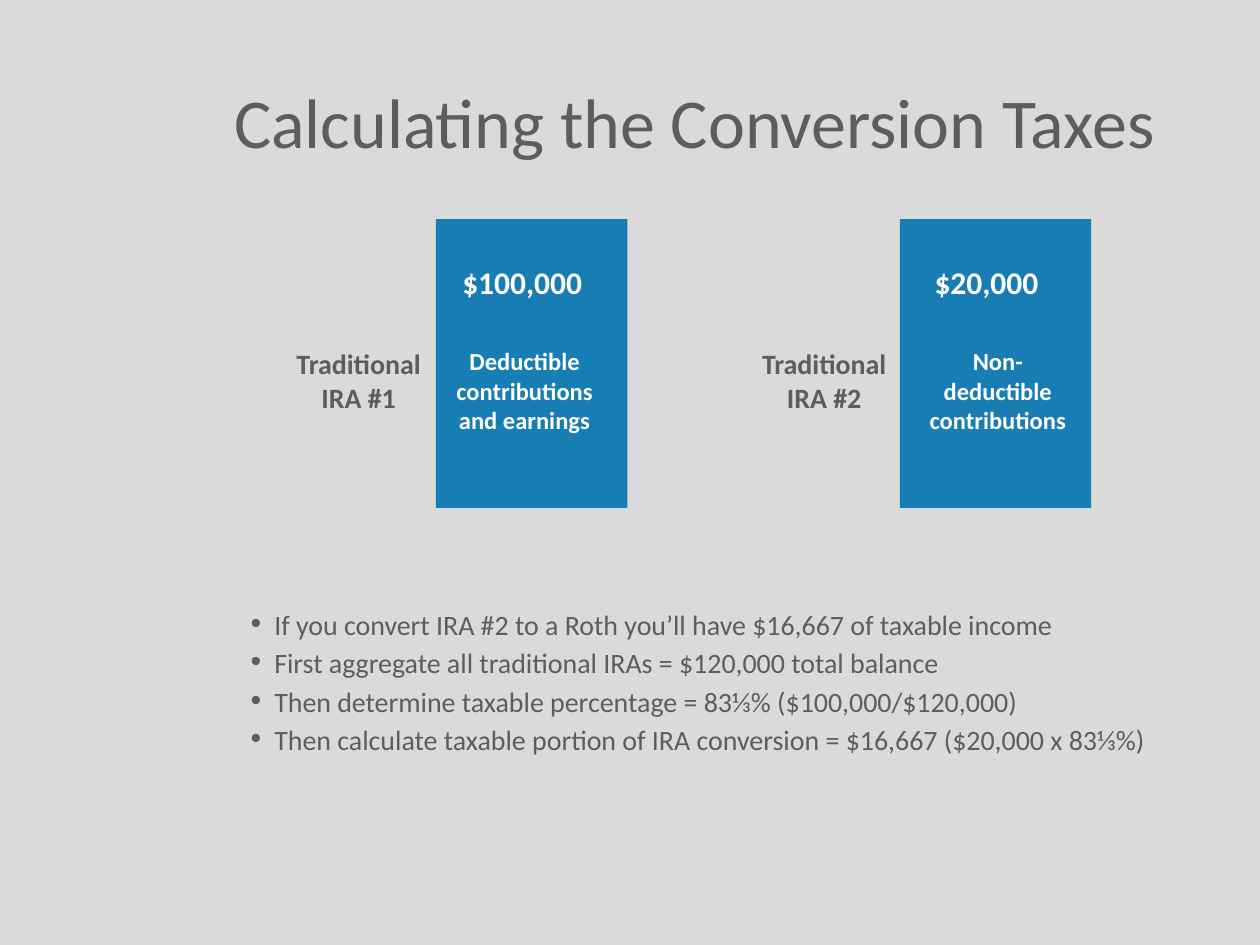
from lxml.etree import SubElement
from pptx import Presentation
from pptx.dml.color import RGBColor
from pptx.enum.shapes import MSO_SHAPE
from pptx.enum.text import MSO_ANCHOR, PP_ALIGN
from pptx.oxml.ns import qn
from pptx.util import Cm, Pt

GREY = RGBColor(0x5D, 0x5D, 0x5D)
BLUE = RGBColor(0x17, 0x7D, 0xB3)
WHITE = RGBColor(0xFF, 0xFF, 0xFF)
BACKGROUND = RGBColor(0xDA, 0xDA, 0xDA)

ACCOUNTS = [
    {"block": 8.79, "label": (5.64, 3.18, ["Traditional", "IRA #1"]),
     "amount": (9.07, 2.95, ["$100,000"]),
     "kind": (8.86, 3.43, ["Deductible contributions and earnings"])},
    {"block": 18.14, "label": (15.09, 3.05, ["Traditional", "IRA #2"]),
     "amount": (18.59, 2.82, ["$20,000"]),
     "kind": (18.39, 3.45, ["Non-deductible contributions"])},
]
STEPS = [
    "If you convert IRA #2 to a Roth you’ll have $16,667 of taxable income",
    "First aggregate all traditional IRAs = $120,000 total balance",
    "Then determine taxable percentage = 83⅓% ($100,000/$120,000)",
    "Then calculate taxable portion of IRA conversion = $16,667 ($20,000 x 83⅓%)",
]


class Page:
    """Hold the text style and the current slide, and draw its elements."""

    font = "Calibri"

    def __init__(self, deck):
        self.slide = deck.slides.add_slide(deck.slide_layouts[6])
        fill = self.slide.background.fill
        fill.solid()
        fill.fore_color.rgb = BACKGROUND

    def block(self, left, top, width, height):
        shape = self.slide.shapes.add_shape(
            MSO_SHAPE.RECTANGLE, Cm(left), Cm(top), Cm(width), Cm(height))
        shape.shadow.inherit = False
        shape.fill.solid()
        shape.fill.fore_color.rgb = BLUE
        shape.line.fill.background()

    def text(self, left, top, width, height, lines, size, color=GREY, bold=False,
             align=PP_ALIGN.LEFT, anchor=MSO_ANCHOR.TOP, wrap=True):
        box = self.slide.shapes.add_textbox(Cm(left), Cm(top), Cm(width), Cm(height))
        frame = box.text_frame
        frame.word_wrap = wrap
        frame.vertical_anchor = anchor
        for index, line in enumerate(lines):
            para = frame.add_paragraph() if index else frame.paragraphs[0]
            para.alignment = align
            span = para.add_run()
            span.text = line
            span.font.color.rgb = color
            formats = {"name": self.font, "size": Pt(size), "bold": bold}
            for name, value in formats.items():
                setattr(span.font, name, value)
        return frame

    def bullets(self, left, top, width, height, lines, size):
        frame = self.text(left, top, width, height, lines, size)
        for index, para in enumerate(frame.paragraphs):
            properties = para._p.get_or_add_pPr()
            properties.set("marL", str(Cm(0.48)))
            properties.set("indent", str(-Cm(0.48)))
            tint = SubElement(properties, qn("a:buClr"))
            SubElement(tint, qn("a:srgbClr"), val=str(GREY))
            SubElement(properties, qn("a:buSzPct"), val="50000")
            SubElement(properties, qn("a:buChar"), char="●")
            if index:
                para.space_before = Pt(2.8)


def main():
    deck = Presentation()
    deck.slide_width, deck.slide_height = Cm(25.4), Cm(19.05)
    page = Page(deck)
    page.text(4.47, 1.47, 20.22, 1.9, ["Calculating the Conversion Taxes"], 40,
              anchor=MSO_ANCHOR.MIDDLE)
    styles = {
        "label": (6.86, 1.63, {"size": 16, "align": PP_ALIGN.CENTER, "wrap": False}),
        "amount": (5.18, 1.02, {"size": 18, "color": WHITE, "wrap": False}),
        "kind": (6.86, 2.06, {"size": 14, "color": WHITE, "align": PP_ALIGN.CENTER}),
    }
    for account in ACCOUNTS:
        page.block(account["block"], 4.42, 3.86, 5.82)
        for part, (top, height, style) in styles.items():
            left, width, lines = account[part]
            page.text(left, top, width, height, lines, bold=True, **style)
    page.bullets(4.8, 12.12, 20.22, 4.88, STEPS, 16)
    deck.save("out.pptx")


if __name__ == "__main__":
    main()
